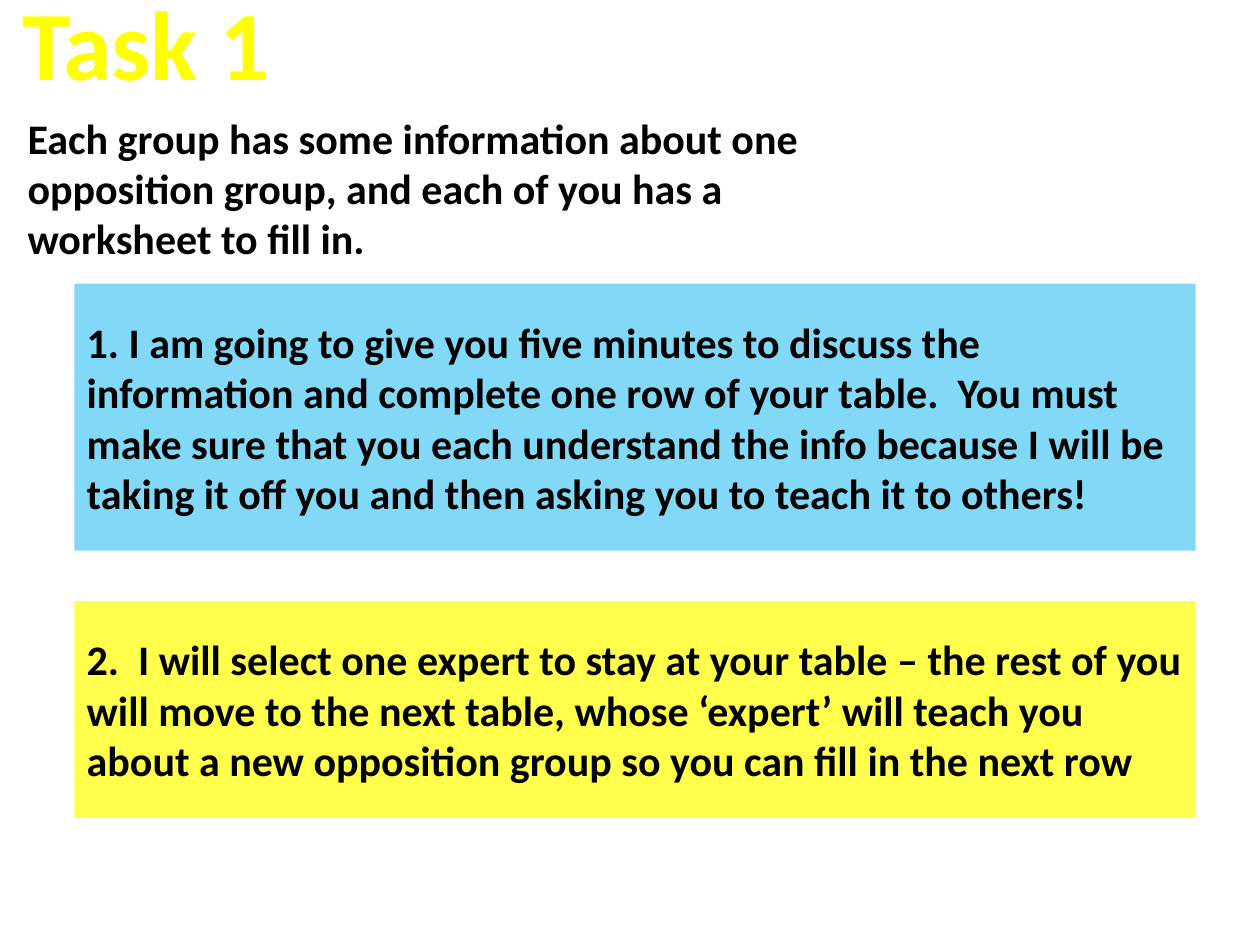
from pptx import Presentation
from pptx.dml.color import RGBColor
from pptx.enum.shapes import MSO_SHAPE as Shape
from pptx.enum.text import MSO_ANCHOR as Anchor, MSO_AUTO_SIZE as Fit, PP_ALIGN as Align
from pptx.oxml.ns import qn
from pptx.util import Inches, Pt
from lxml import etree

# Content
TITLE = "Task 1"
INTRO = ("Each group has some information about one opposition group, "
         "and each of you has a worksheet to fill in.")
STEPS = [  # text, fill, opacity in percent, height
    ("1. I am going to give you five minutes to discuss the information and "
     "complete one row of your table.  You must make sure that you each "
     "understand the info because I will be taking it off you and then asking "
     "you to teach it to others!", "00B0F0", 49, 2.12),
    ("2.  I will select one expert to stay at your table – the rest of you "
     "will move to the next table, whose ‘expert’ will teach you about a new "
     "opposition group so you can fill in the next row", "FFFF00", 70, 1.72),
]
LEFT, TOP, WIDTH, GAP = 0.59, 2.25, 8.9, 0.4


def paint(target, color):
    target.rgb = RGBColor.from_string(color)


def write(shape, text, size=24, color="000000", align=Align.LEFT, anchor=Anchor.TOP):
    frame = shape.text_frame
    frame.text = text
    frame.word_wrap = True
    frame.auto_size = Fit.NONE
    frame.vertical_anchor = anchor
    para = frame.paragraphs[0]
    para.alignment = align
    font = para.runs[0].font
    font.name, font.size, font.bold = "Calibri", Pt(size), True
    paint(font.color, color)


def fill(shape, color, opacity):
    shape.fill.solid()
    paint(shape.fill.fore_color, color)
    tint = shape.fill._xPr.find(".//" + qn("a:srgbClr"))
    etree.SubElement(tint, qn("a:alpha"), val=str(opacity * 1000))


deck = Presentation()
deck.slide_width, deck.slide_height = Inches(10), Inches(7.5)
slide = deck.slides.add_slide(deck.slide_layouts[5])

# Title
title = slide.shapes.title
title.left, title.top = Inches(-0.67), Inches(-0.19)
title.width, title.height = Inches(3.66), Inches(1.04)
write(title, TITLE, 56, "FFFF00", Align.CENTER)

# Introduction
intro = slide.shapes.add_textbox(Inches(0.12), Inches(0.84), Inches(6.69), Inches(1.31))
write(intro, INTRO)

# Step boxes, stacked with an equal gap
top = TOP
for text, color, opacity, height in STEPS:
    box = slide.shapes.add_shape(Shape.RECTANGLE, Inches(LEFT), Inches(top),
                                 Inches(WIDTH), Inches(height))
    box.shadow.inherit = False
    box.line.fill.background()
    fill(box, color, opacity)
    write(box, text, anchor=Anchor.MIDDLE)
    top += height + GAP

deck.save("out.pptx")
